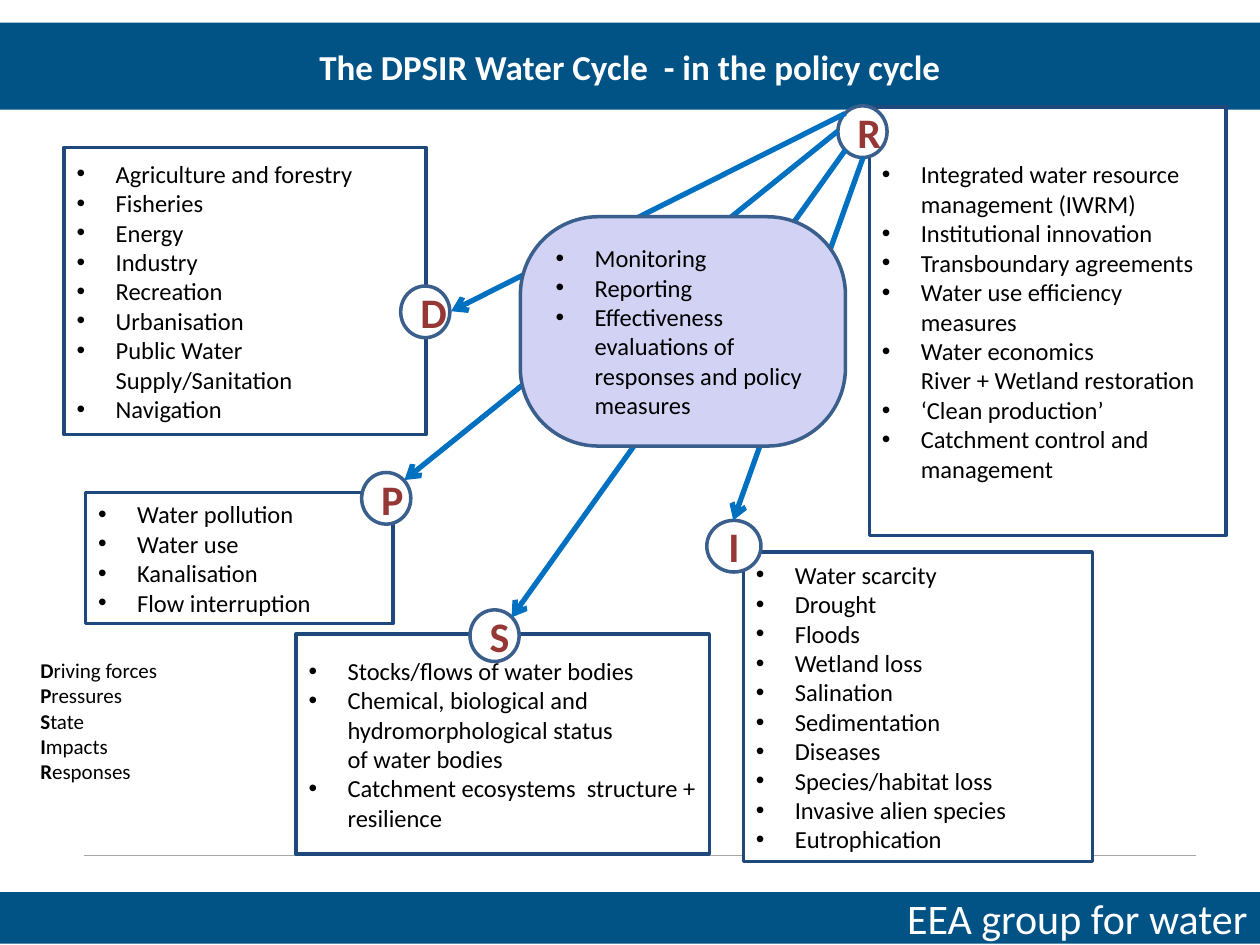
from dataclasses import dataclass

from lxml import etree
from pptx import Presentation
from pptx.dml.color import RGBColor
from pptx.enum.shapes import MSO_CONNECTOR, MSO_SHAPE
from pptx.enum.text import MSO_ANCHOR, PP_ALIGN
from pptx.oxml.ns import qn
from pptx.util import Inches, Pt

RECTANGLE = MSO_SHAPE.RECTANGLE
ROUNDED = MSO_SHAPE.ROUNDED_RECTANGLE
OVAL = MSO_SHAPE.OVAL
STRAIGHT = MSO_CONNECTOR.STRAIGHT
MIDDLE, TOP = MSO_ANCHOR.MIDDLE, MSO_ANCHOR.TOP
LEFT, CENTER, RIGHT = PP_ALIGN.LEFT, PP_ALIGN.CENTER, PP_ALIGN.RIGHT

NAVY, BORDER, OUTLINE = "005384", "1F497D", "3A5F8C"
WHITE, BLACK, LILAC = "FFFFFF", "000000", "D2D2F4"
ARROW_BLUE, RULE_GREY, BADGE_RED = "0070C0", "A6A6A6", "953735"

TITLE_FORMAT = {"size": Pt(20), "bold": True}
FOOTER_FORMAT = {"size": Pt(24), "bold": False}
BADGE_FORMAT = {"size": Pt(24), "bold": True}
LIST_FORMAT = {"size": Pt(14), "bold": False}
INITIAL_FORMAT = {"size": Pt(12), "bold": True}
LEGEND_FORMAT = {"size": Pt(12), "bold": False}

BULLET_INDENT = Inches(0.31)
BADGE_HEIGHT = 0.41


@dataclass
class Box:
    left: float
    top: float
    width: float
    height: float

    def lengths(self) -> list:
        return [Inches(value) for value in (self.left, self.top, self.width, self.height)]


@dataclass
class Stage:
    letter: str
    box: Box
    badge_left: float
    badge_top: float
    items: list
    badge_width: float = 0.39


@dataclass
class Line:
    start: tuple
    end: tuple


DRIVERS = Stage("D", Box(0.51, 1.17, 2.87, 2.28), 3.18, 2.27, [
    "Agriculture and forestry", "Fisheries", "Energy", "Industry", "Recreation",
    "Urbanisation", "Public Water Supply/Sanitation", "Navigation"])
STATE = Stage("S", Box(2.35, 5.03, 3.28, 1.75), 3.73, 4.84, [
    "Stocks/flows of water bodies",
    "Chemical, biological and hydromorphological status\vof water bodies",
    "Catchment ecosystems  structure + resilience"])
RESPONSES = Stage("R", Box(6.9, 0.85, 2.83, 3.4), 6.65, 0.84, [
    "Integrated water resource management (IWRM)", "Institutional innovation",
    "Transboundary agreements", "Water use efficiency measures",
    "Water economics\vRiver + Wetland restoration", "‘Clean production’",
    "Catchment control and management"])
IMPACTS = Stage("I", Box(5.9, 4.38, 2.77, 2.46), 5.61, 4.13, [
    "Water scarcity", "Drought", "Floods", "Wetland loss", "Salination",
    "Sedimentation", "Diseases", "Species/habitat loss", "Invasive alien species",
    "Eutrophication"], 0.43)
PRESSURES = Stage("P", Box(0.68, 3.91, 2.44, 1.04), 2.87, 3.75, [
    "Water pollution", "Water use", "Kanalisation", "Flow interruption"])

RESPONSE_ARROWS = [
    Line((6.71, 0.9), (3.58, 2.47)),
    Line((6.65, 1.04), (3.21, 3.81)),
    Line((6.71, 1.19), (4.06, 4.9)),
    Line((6.85, 1.25), (5.82, 4.13)),
]
POLICY_ITEMS = ["Monitoring", "Reporting",
                "Effectiveness evaluations of responses and policy measures"]
LEGEND = ["Driving forces", "Pressures", "State", "Impacts", "Responses"]


def color(value: str) -> RGBColor:
    return RGBColor.from_string(value)


def format_run(run, values: dict, fill: str) -> None:
    for name, value in {"name": "Calibri", **values}.items():
        setattr(run.font, name, value)
    run.font.color.rgb = color(fill)


def write_text(shape, lines: list, values: dict, fill: str, align=LEFT, bullets=False) -> None:
    frame = shape.text_frame
    frame.word_wrap = True
    frame.vertical_anchor = MIDDLE
    frame.text = "\n".join(lines)
    for paragraph in frame.paragraphs:
        paragraph.alignment = align
        if bullets:
            properties = paragraph._p.get_or_add_pPr()
            properties.set("marL", str(BULLET_INDENT))
            properties.set("indent", str(-BULLET_INDENT))
            etree.SubElement(properties, qn("a:buFont"), typeface="Arial")
            etree.SubElement(properties, qn("a:buChar"), char="•")
        for run in paragraph.runs:
            format_run(run, values, fill)


def add_box(shapes, kind, box: Box, fill: str, outline: str = ""):
    shape = shapes.add_shape(kind, *box.lengths())
    shape.shadow.inherit = False
    shape.fill.solid()
    shape.fill.fore_color.rgb = color(fill)
    if outline:
        shape.line.color.rgb = color(outline)
        shape.line.width = Pt(2)
    else:
        shape.line.fill.background()
    return shape


def add_line(shapes, line: Line, stroke: str, width: float, arrow: bool = False) -> None:
    connector = shapes.add_connector(
        STRAIGHT, *[Inches(value) for value in (*line.start, *line.end)])
    connector.line.color.rgb = color(stroke)
    connector.line.width = Pt(width)
    if arrow:
        etree.SubElement(connector.line._get_or_add_ln(), qn("a:tailEnd"), type="arrow")
    etree.SubElement(connector._element.spPr, qn("a:effectLst"))


def add_stage(shapes, stage: Stage) -> None:
    group = shapes.add_group_shape()
    panel = add_box(group.shapes, RECTANGLE, stage.box, WHITE, BORDER)
    write_text(panel, stage.items, LIST_FORMAT, BLACK, bullets=True)
    badge_box = Box(stage.badge_left, stage.badge_top, stage.badge_width, BADGE_HEIGHT)
    badge = add_box(group.shapes, OVAL, badge_box, WHITE, OUTLINE)
    write_text(badge, [stage.letter], BADGE_FORMAT, BADGE_RED, CENTER)


def add_title(slide) -> None:
    title = slide.shapes.title
    title.left, title.top, title.width, title.height = Box(0, 0.18, 10, 0.69).lengths()
    title.fill.solid()
    title.fill.fore_color.rgb = color(NAVY)
    write_text(title, ["The DPSIR Water Cycle  - in the policy cycle"],
               TITLE_FORMAT, WHITE, CENTER)


def add_legend(shapes) -> None:
    legend = shapes.add_textbox(*Box(0.12, 5.17, 2.05, 1.11).lengths())
    frame = legend.text_frame
    write_text(legend, [word[0] for word in LEGEND], INITIAL_FORMAT, BLACK)
    frame.vertical_anchor = TOP
    frame.margin_left = Inches(0.2)
    for paragraph, word in zip(frame.paragraphs, LEGEND):
        run = paragraph.add_run()
        run.text = word[1:]
        format_run(run, LEGEND_FORMAT, BLACK)


def main() -> None:
    presentation = Presentation()
    presentation.slide_width, presentation.slide_height = Inches(10), Inches(7.5)
    slide = presentation.slides.add_slide(presentation.slide_layouts[5])
    shapes = slide.shapes

    add_title(slide)
    add_line(shapes, Line((9.49, 6.79), (0.67, 6.79)), RULE_GREY, 0.75)
    add_legend(shapes)
    for stage in (DRIVERS, STATE, RESPONSES, IMPACTS):
        add_stage(shapes, stage)
    for arrow in RESPONSE_ARROWS:
        add_line(shapes, arrow, ARROW_BLUE, 3, arrow=True)
    add_stage(shapes, PRESSURES)

    policy = add_box(shapes, ROUNDED, Box(4.13, 1.72, 2.58, 1.82), LILAC, OUTLINE)
    policy.adjustments[0] = 0.34
    write_text(policy, POLICY_ITEMS, LIST_FORMAT, BLACK, bullets=True)

    footer = add_box(shapes, RECTANGLE, Box(0, 7.08, 10, 0.41), NAVY)
    write_text(footer, ["EEA group for water"], FOOTER_FORMAT, WHITE, RIGHT)

    presentation.save("out.pptx")


if __name__ == "__main__":
    main()
